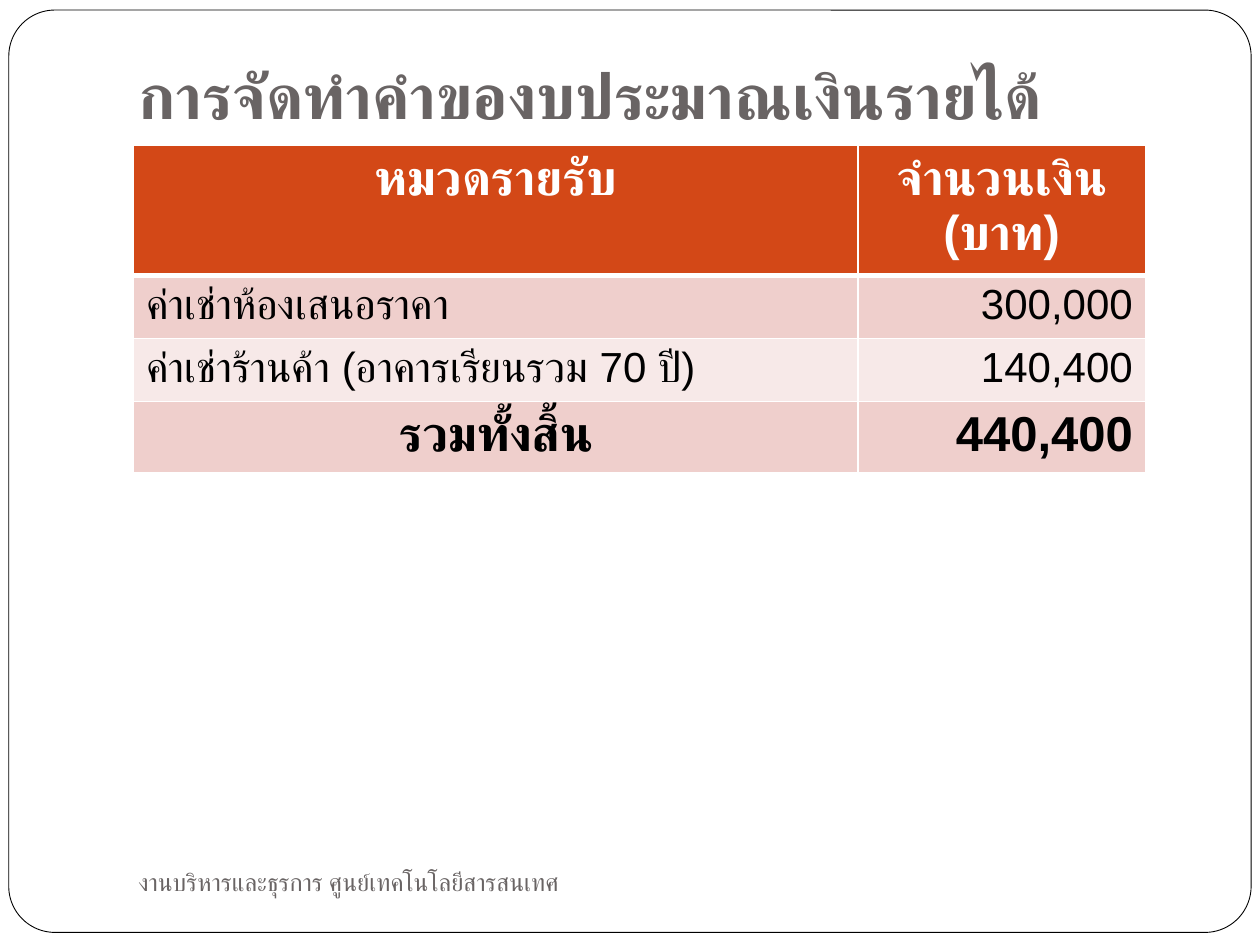
from lxml import etree
from pptx import Presentation
from pptx.dml.color import RGBColor
from pptx.enum.shapes import MSO_SHAPE
from pptx.enum.text import MSO_ANCHOR, PP_ALIGN
from pptx.oxml.ns import qn
from pptx.util import Inches, Pt

LEFT, CENTER, RIGHT = PP_ALIGN.LEFT, PP_ALIGN.CENTER, PP_ALIGN.RIGHT
WHITE = RGBColor(0xFF, 0xFF, 0xFF)
BLACK = RGBColor(0, 0, 0)
GRAY = RGBColor(0x69, 0x64, 0x64)
ORANGE = RGBColor(0xD3, 0x48, 0x17)
PINK = RGBColor(0xEF, 0xCF, 0xCC)
PALE_PINK = RGBColor(0xF7, 0xE9, 0xE8)


def write_text(frame, text, font, size, color, bold=False, align=LEFT):
    """Fill the first paragraph, naming the font for Latin and Thai alike."""
    para = frame.paragraphs[0]
    para.alignment = align
    span = para.add_run()
    span.text = text
    span.font.name = font
    span.font.size = Pt(size)
    span.font.bold = bold
    span.font.color.rgb = color
    thai_font = etree.SubElement(span.font._element, qn("a:cs"))
    thai_font.set("typeface", font)


def set_borders(cell, bottom_width):
    """Draw white borders, 1 pt wide except at the bottom."""
    properties = cell._tc.get_or_add_tcPr()
    widths = {"a:lnL": 1, "a:lnR": 1, "a:lnT": 1, "a:lnB": bottom_width}
    for position, (tag, width) in enumerate(widths.items()):
        line = etree.Element(qn(tag), w=str(Pt(width)))
        fill = etree.SubElement(line, qn("a:solidFill"))
        etree.SubElement(fill, qn("a:srgbClr"), val=str(WHITE))
        properties.insert(position, line)


deck = Presentation()
deck.slide_width, deck.slide_height = Inches(10), Inches(7.5)
page = deck.slides.add_slide(deck.slide_layouts[6])

frame = page.shapes.add_shape(
    MSO_SHAPE.ROUNDED_RECTANGLE, Inches(0.07), Inches(0.08), Inches(9.86), Inches(7.32))
frame.adjustments[0] = 0.05
frame.shadow.inherit = False
frame.fill.solid()
frame.fill.fore_color.rgb = WHITE
frame.line.color.rgb = BLACK
frame.line.width = Pt(0.5)

title = page.shapes.add_textbox(Inches(1), Inches(0.3), Inches(8.5), Inches(0.85)).text_frame
title.word_wrap = True
title.vertical_anchor = MSO_ANCHOR.BOTTOM
title.margin_bottom = Inches(0.1)
write_text(title, "การจัดทำคำของบประมาณเงินรายได้", "Lato", 36, GRAY, bold=True)

footer = page.shapes.add_textbox(Inches(1), Inches(6.75), Inches(4.33), Inches(0.5)).text_frame
footer.word_wrap = True
footer.vertical_anchor = MSO_ANCHOR.MIDDLE
write_text(footer, "งานบริหารและธุรการ ศูนย์เทคโนโลยีสารสนเทศ", "Times New Roman", 14, GRAY)

# Texts, alignments, size, bold, text colour, fill, bottom border
rows = [
    (("หมวดรายรับ", "จำนวนเงิน (บาท)"), (CENTER, CENTER), 28, True, WHITE, ORANGE, 3),
    (("ค่าเช่าห้องเสนอราคา", "300,000"), (LEFT, RIGHT), 24, False, BLACK, PINK, 1),
    (("ค่าเช่าร้านค้า (อาคารเรียนรวม 70 ปี)", "140,400"), (LEFT, RIGHT), 24, False, BLACK,
     PALE_PINK, 1),
    (("รวมทั้งสิ้น", "440,400"), (CENTER, RIGHT), 28, True, BLACK, PINK, 1),
]
income = page.shapes.add_table(
    len(rows), 2, Inches(1.06), Inches(1.15), Inches(8.03), Inches(1.64)).table
income.columns[0].width = Inches(5.75)
income.columns[1].width = Inches(2.28)

for row, (texts, aligns, size, bold, color, fill, bottom_width) in enumerate(rows):
    for column, (text, align) in enumerate(zip(texts, aligns)):
        cell = income.cell(row, column)
        cell.fill.solid()
        cell.fill.fore_color.rgb = fill
        set_borders(cell, bottom_width)
        write_text(cell.text_frame, text, "Arial", size, color, bold, align)

deck.save("out.pptx")
